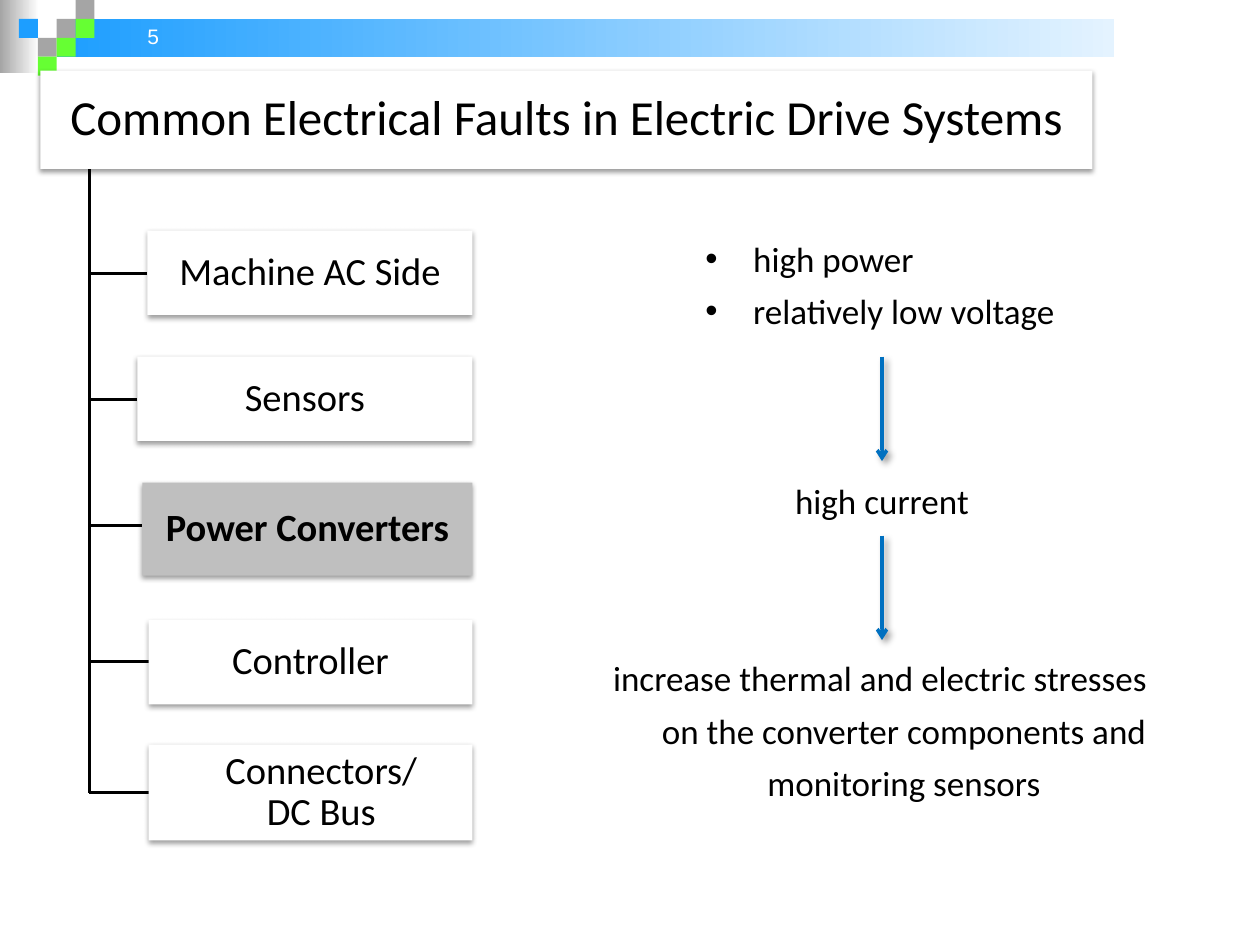
from typing import NamedTuple

from lxml.etree import SubElement
from pptx import Presentation
from pptx.dml.color import RGBColor
from pptx.enum.shapes import MSO_CONNECTOR, MSO_SHAPE
from pptx.enum.text import MSO_ANCHOR, PP_ALIGN
from pptx.oxml.ns import qn
from pptx.util import Inches, Pt

COLUMNS, ROWS = 100, 75
WIDTH, HEIGHT = Inches(10), Inches(7.5)
BLACK, WHITE, BLUE, GREEN, GREY = "000000", "FFFFFF", "1D9EFF", "66FF33", "A5A5A5"


class Box(NamedTuple):
    """A rectangle in grid columns and rows."""
    left: float
    top: float
    width: float
    height: float

    def inner(self, left, top, width, height):
        """Return a box placed relative to this one."""
        return Box(self.left + left, self.top + top, width, height)

    def lengths(self):
        """Return left, top, width and height in slide units."""
        column, row = WIDTH / COLUMNS, HEIGHT / ROWS
        return (int(self.left * column), int(self.top * row),
                int(self.width * column), int(self.height * row))


def color(value):
    """Turn a hex string into a colour."""
    return RGBColor.from_string(value)


def add_effects(shape, shade=None):
    """Give a shape no shadow, or one of (blur, distance, angle, opacity)."""
    properties = shape.element.spPr
    effects = SubElement(properties, qn("a:effectLst"))
    if shade:
        blur, distance, angle, opacity = shade
        shadow = SubElement(effects, qn("a:outerShdw"), blurRad=str(Pt(blur)),
                            dist=str(Pt(distance)), dir=str(angle * 60000),
                            algn="ctr", rotWithShape="0")
        black = SubElement(shadow, qn("a:srgbClr"), val=BLACK)
        SubElement(black, qn("a:alpha"), val=str(opacity * 1000))


def add_rectangle(slide, box, *fills, shade=None):
    """Draw a borderless rectangle with one fill or a two-colour gradient."""
    shape = slide.shapes.add_shape(MSO_SHAPE.RECTANGLE, *box.lengths())
    shape.line.fill.background()
    if len(fills) == 1:
        shape.fill.solid()
        shape.fill.fore_color.rgb = color(fills[0])
    else:
        shape.fill.gradient()
        shape.fill.gradient_angle = 0
        for stop, value in zip(shape.fill.gradient_stops, fills):
            stop.color.rgb = color(value)
    add_effects(shape, shade)
    return shape


def add_line(slide, start, end, line_color=BLACK, arrow=False):
    """Draw a straight line, or a shadowed arrow, between two grid points."""
    x, y, *_ = Box(*start, 0, 0).lengths()
    end_x, end_y, *_ = Box(*end, 0, 0).lengths()
    line = slide.shapes.add_connector(MSO_CONNECTOR.STRAIGHT, x, y, end_x, end_y)
    line.line.color.rgb = color(line_color)
    line.line.width = Pt(2)
    if arrow:
        outline = line.element.spPr.find(qn("a:ln"))
        SubElement(outline, qn("a:tailEnd"), type="arrow")
    add_effects(line, (4, 3, 45, 40) if arrow else None)


def style_paragraph(paragraph, size, name="Calibri", font_color=BLACK, bold=False):
    """Set the font of a whole paragraph."""
    font = paragraph.font
    font.size, font.name, font.bold = Pt(size), name, bold
    font.color.rgb = color(font_color)


def add_card(slide, box, text, size, fill=WHITE, bold=False, indent=0):
    """Draw a shadowed card with centred text."""
    card = add_rectangle(slide, box, fill, shade=(3.1, 1.6, 90, 38))
    frame = card.text_frame
    frame.word_wrap = True
    frame.vertical_anchor = MSO_ANCHOR.MIDDLE
    frame.margin_left = Inches(0.02 + indent)
    frame.margin_right = frame.margin_top = frame.margin_bottom = Inches(0.02)
    paragraph = frame.paragraphs[0]
    paragraph.text = text
    paragraph.alignment = PP_ALIGN.CENTER
    paragraph.line_spacing = 0.9
    style_paragraph(paragraph, size, bold=bold)


def add_note(slide, box, lines, bullets=False):
    """Write hanging-indent lines, bulleted or centred."""
    frame = slide.shapes.add_textbox(*box.lengths()).text_frame
    frame.word_wrap = True
    for index, text in enumerate(lines):
        paragraph = frame.add_paragraph() if index else frame.paragraphs[0]
        paragraph.text = text
        paragraph.line_spacing = 1.25
        properties = paragraph._p.get_or_add_pPr()
        properties.set("marL", str(Inches(0.38)))
        properties.set("indent", str(-Inches(0.38)))
        if bullets:
            SubElement(properties, qn("a:buFont"), typeface="Arial")
            SubElement(properties, qn("a:buChar"), char="•")
        else:
            paragraph.alignment = PP_ALIGN.CENTER
        style_paragraph(paragraph, 20)


def add_banner(slide, box):
    """Draw the gradient bar, the checkered corner and the slide number."""
    cell = 1.5
    add_rectangle(slide, box.inner(0, 0, 3.1, 5.8), GREY, WHITE)
    add_rectangle(slide, box.inner(3 * cell, cell, 83.9, 2 * cell), BLUE, "E4F3FF")
    squares = [(3, 1, GREY), (4, 0, GREY), (4, 1, GREEN), (2, 2, GREY),
               (1, 1, BLUE), (3, 2, GREEN), (2, 3, GREEN)]
    for column, row, fill in squares:
        add_rectangle(slide, box.inner(column * cell, row * cell, cell, cell), fill)
    number = slide.shapes.add_textbox(*box.inner(3.8, 0.9, 9.8, 4).lengths())
    frame = number.text_frame
    frame.word_wrap = True
    frame.vertical_anchor = MSO_ANCHOR.MIDDLE
    paragraph = frame.paragraphs[0]
    paragraph.text = "5"
    paragraph.alignment = PP_ALIGN.RIGHT
    style_paragraph(paragraph, 12, "Arial", WHITE)


def add_fault_tree(slide, box):
    """Draw the title card with the fault cards branching from its spine."""
    spine = box.left + 3.9
    right = box.left + 34.3
    faults = [
        ("Machine AC Side", 8.5, 12.7, 6.7, 16.1, {}),
        ("Sensors", 7.7, 22.7, 6.7, 26.1, {}),
        ("Power Converters", 8.1, 32.7, 7.4, 36.1, {"fill": "BFBFBF", "bold": True}),
        ("Controller", 8.6, 43.6, 6.7, 46.9, {}),
        ("Connectors/\vDC Bus", 8.6, 53.5, 7.6, 57.3, {"indent": 0.17}),
    ]
    add_line(slide, (spine, box.top + 7.8), (spine, box.top + faults[-1][4]))
    for text, left, top, height, joint, style in faults:
        card = box.inner(left, top, right - box.left - left, height)
        add_line(slide, (spine, box.top + joint), (card.left, box.top + joint))
        add_card(slide, card, text, 22, **style)
    add_card(slide, box.inner(0, 0, box.width, 7.8),
             "Common Electrical Faults in Electric Drive Systems", 28)


def add_consequences(slide, box):
    """Write the chain of consequences joined by arrows."""
    middle = box.left + 23.3
    add_note(slide, box.inner(8.3, 0, 43.3, 7.5),
             ["high power", "relatively low voltage"], bullets=True)
    add_note(slide, box.inner(3.7, 19.2, 39.2, 5), ["high current"])
    add_note(slide, box.inner(0, 33.3, box.width, 5),
             ["increase thermal and electric stresses on the converter "
              "components and monitoring sensors"])
    for top in (10.8, 25):
        add_line(slide, (middle, box.top + top), (middle, box.top + top + 8.3),
                 "0070C0", arrow=True)


def main():
    """Build the slide and save it."""
    presentation = Presentation()
    presentation.slide_width, presentation.slide_height = WIDTH, HEIGHT
    slide = presentation.slides.add_slide(presentation.slide_layouts[6])
    add_banner(slide, Box(0, 0, COLUMNS, 6))
    add_fault_tree(slide, Box(3.2, 5.6, 83.5, 61.1))
    add_consequences(slide, Box(46.7, 17.5, 46.3, 46))
    presentation.save("out.pptx")


if __name__ == "__main__":
    main()
